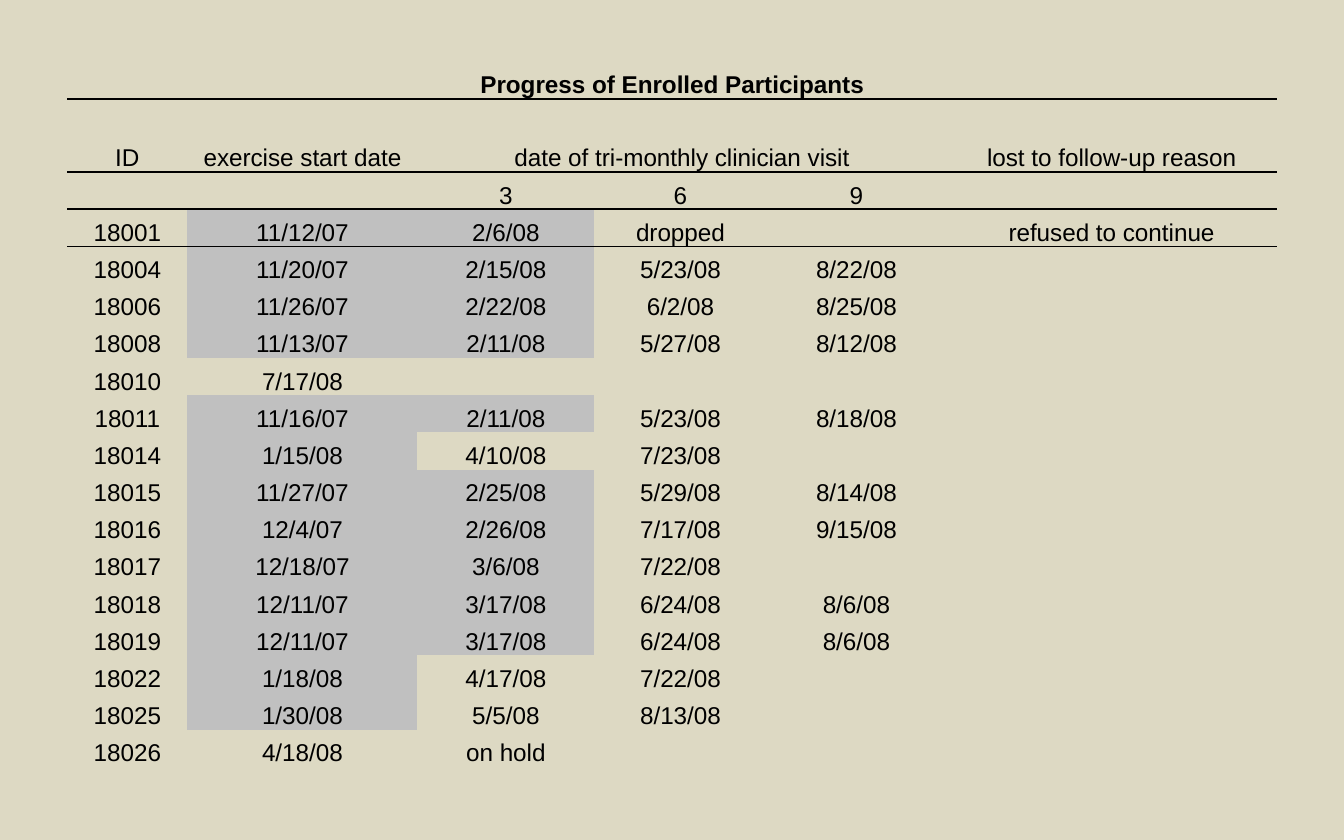
"""Build a slide with the progress table of enrolled participants."""
from dataclasses import dataclass

from pptx import Presentation
from pptx import oxml
from pptx import util as u
from pptx.dml import color
from pptx.enum import text
from pptx.oxml import ns

INK, SAND, GREY = "000000", "DDD9C3", "C0C0C0"
SIZE = u.Pt(13)
PLAIN = "{2D5ABB26-0587-4C30-8999-92F81FD0307C}"
WIDTHS = (2.27, 4.35, 3.34, 3.26, 3.39, 6.25)
HIGH, HEAD = 13.34, 1.38
VISITS = range(2, 5)


@dataclass
class Person:
    """One enrolled participant."""
    id: str
    start: str
    three: str = ""
    six: str = ""
    nine: str = ""
    reason: str = ""

    def row(self) -> tuple[str, ...]:
        """Return the cell texts in column order."""
        return (self.id, self.start, self.three, self.six, self.nine, self.reason)


@dataclass
class Rule:
    """A line under some columns of a row."""
    row: int
    cols: range


TITLE = ("Progress of Enrolled Participants", "", "", "", "", "")
LABELS = ("ID", "exercise start date", "date of tri-monthly clinician visit",
          "", "", "lost to follow-up reason")
MONTHS = ("", "", "3", "6", "9", "")
PEOPLE = (
    Person("18001", "11/12/07", "2/6/08", "dropped", reason="refused to continue"),
    Person("18004", "11/20/07", "2/15/08", "5/23/08", "8/22/08"),
    Person("18006", "11/26/07", "2/22/08", "6/2/08", "8/25/08"),
    Person("18008", "11/13/07", "2/11/08", "5/27/08", "8/12/08"),
    Person("18010", "7/17/08"),
    Person("18011", "11/16/07", "2/11/08", "5/23/08", "8/18/08"),
    Person("18014", "1/15/08", "4/10/08", "7/23/08"),
    Person("18015", "11/27/07", "2/25/08", "5/29/08", "8/14/08"),
    Person("18016", "12/4/07", "2/26/08", "7/17/08", "9/15/08"),
    Person("18017", "12/18/07", "3/6/08", "7/22/08"),
    Person("18018", "12/11/07", "3/17/08", "6/24/08", "8/6/08"),
    Person("18019", "12/11/07", "3/17/08", "6/24/08", "8/6/08"),
    Person("18022", "1/18/08", "4/17/08", "7/22/08"),
    Person("18025", "1/30/08", "5/5/08", "8/13/08"),
    Person("18026", "4/18/08", "on hold"),
)
ALL = range(len(WIDTHS))
RULES = (Rule(0, ALL), Rule(1, VISITS), Rule(2, ALL))


def paint(fill, tint: str) -> None:
    """Give a fill one solid colour."""
    fill.solid()
    fill.fore_color.rgb = color.RGBColor.from_string(tint)


def early(word: str) -> bool:
    """Tell whether a date falls before April 2008."""
    if "/" not in word:
        return False
    month, _, year = word.split("/")
    return (int(year), int(month)) < (8, 4)


def write(cell, word: str, bold: bool) -> None:
    """Set the text, format and shade of a cell."""
    cell.margin_left = cell.margin_right = cell.margin_top = u.Cm(0.03)
    cell.margin_bottom = 0
    cell.vertical_anchor = text.MSO_ANCHOR.BOTTOM
    para = cell.text_frame.paragraphs[0]
    para.text = word
    para.alignment = text.PP_ALIGN.CENTER
    para._p.get_or_add_endParaRPr().set("sz", str(SIZE.centipoints))
    for run in para.runs:
        run.font.name, run.font.size, run.font.bold = "Arial", SIZE, bold
        paint(run.font.fill, INK)
    if early(word):
        paint(cell.fill, GREY)
    else:
        cell.fill.background()


def edge(cell, side: str) -> None:
    """Draw a thin line on one side of a cell."""
    line = oxml.parse_xml(
        f'<a:{side} {ns.nsdecls("a")} w="{u.Pt(1)}"><a:solidFill>'
        f'<a:srgbClr val="{INK}"/></a:solidFill></a:{side}>')
    props = cell._tc.get_or_add_tcPr()
    props.insert(len(props.findall(ns.qn("a:lnT"))), line)


def draw(slide) -> None:
    """Add the whole table to the slide."""
    rows = [TITLE, LABELS, MONTHS, *(p.row() for p in PEOPLE)]
    table = slide.shapes.add_table(
        len(rows), len(WIDTHS), u.Cm(1.27), u.Cm(1.17),
        u.Cm(sum(WIDTHS)), u.Cm(HIGH)).table
    table.first_row = table.horz_banding = False
    next(table._tbl.iter(ns.qn("a:tableStyleId"))).text = PLAIN
    for col, width in zip(table.columns, WIDTHS):
        col.width = u.Cm(width)
    for i, row in enumerate(rows):
        table.rows[i].height = u.Cm(HEAD if i == 1 else (HIGH - HEAD) / (len(rows) - 1))
        for j, word in enumerate(row):
            write(table.cell(i, j), word, i == 0)
    for rule in RULES:
        for j in rule.cols:
            edge(table.cell(rule.row + 1, j), "lnT")
            edge(table.cell(rule.row, j), "lnB")
    table.cell(0, 0).merge(table.cell(0, ALL[-1]))
    table.cell(1, VISITS[0]).merge(table.cell(1, VISITS[-1]))


def main() -> None:
    """Make and save the deck."""
    deck = Presentation()
    deck.slide_width, deck.slide_height = u.Cm(25.4), u.Cm(15.88)
    slide = deck.slides.add_slide(deck.slide_layouts.get_by_name("Blank"))
    paint(slide.background.fill, SAND)
    draw(slide)
    deck.save("out.pptx")


if __name__ == "__main__":
    main()
